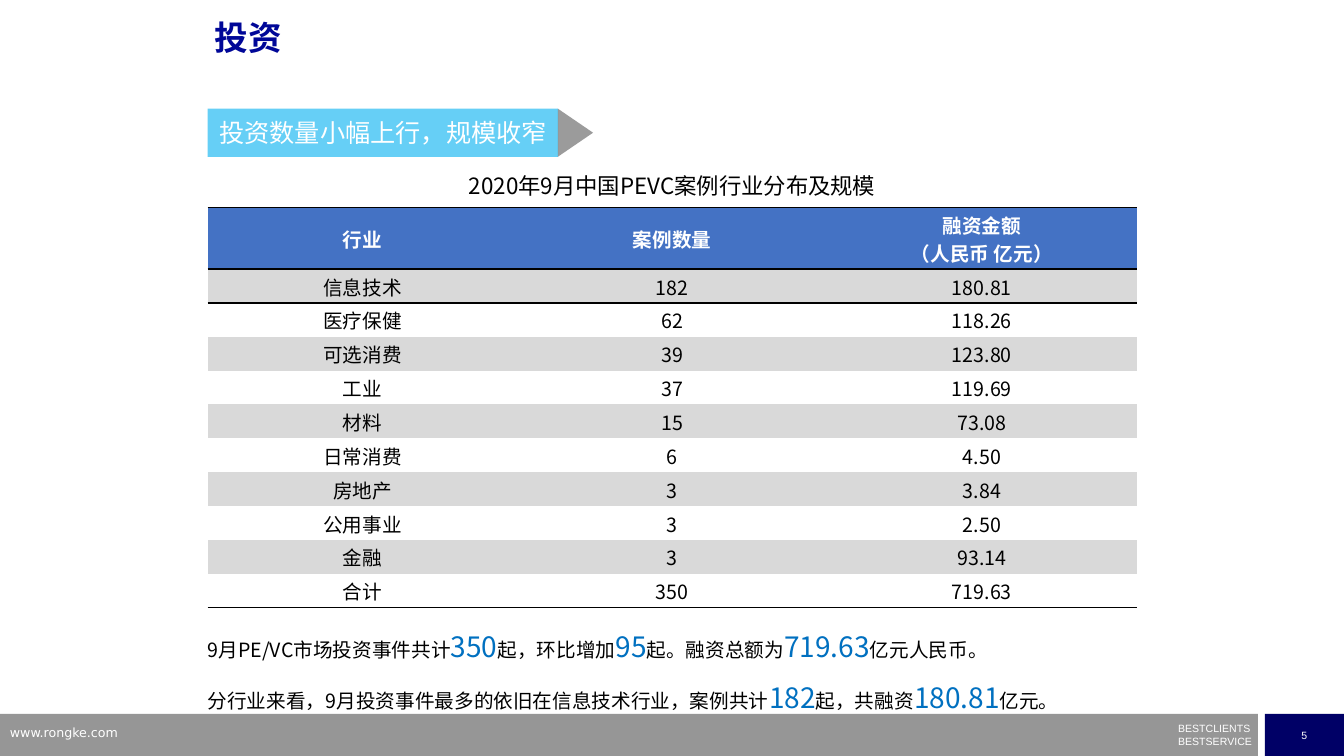
from dataclasses import dataclass
from typing import Any

from lxml.etree import SubElement
from pptx import Presentation
from pptx.dml.color import RGBColor
from pptx.enum.shapes import MSO_SHAPE as Shape
from pptx.enum.text import MSO_ANCHOR as Anchor, PP_ALIGN as Align
from pptx.oxml.ns import qn
from pptx.util import Pt

COLORS = {
    "white": "FFFFFF", "black": "000000", "bar": "969696", "navy": "000066",
    "title": "000798", "banner": "00B0F0", "arrow": "595959",
    "accent": "0070C0", "header": "4472C4", "band": "D9D9D9",
}
CJK = "Noto Sans CJK SC"
NO_STYLE = "{2D5ABB26-0587-4C30-8999-92F81FD0307C}"


@dataclass
class Style:
    size: float
    color: str
    font: str = CJK
    bold: bool = False


@dataclass
class Box:
    left: float
    top: float
    width: float
    height: float

    def emu(self) -> tuple:
        return Pt(self.left), Pt(self.top), Pt(self.width), Pt(self.height)


@dataclass
class Block:
    kind: Any
    box: Box
    color: str
    opacity: int = 100
    rotation: float = 0
    text: str = ""
    style: Style | None = None


@dataclass
class Label:
    box: Box
    paragraphs: list
    styles: list
    para: dict
    inset: bool = False
    gap: float = 0


def rgb(name: str) -> RGBColor:
    return RGBColor.from_string(COLORS[name])


def apply(target: Any, values: dict) -> None:
    for name, value in values.items():
        setattr(target, name, value)


def format_run(r: Any, style: Style) -> None:
    apply(r.font, {"size": Pt(style.size), "name": style.font, "bold": style.bold})
    r.font.color.rgb = rgb(style.color)
    SubElement(r.font._element, qn("a:ea"), typeface=CJK)


def write(p: Any, text: str, style: Style, **values: Any) -> None:
    p.text = text
    apply(p, values)
    for r in p.runs:
        format_run(r, style)


def draw_block(slide: Any, block: Block) -> None:
    s = slide.shapes.add_shape(block.kind, *block.box.emu())
    s.shadow.inherit = False
    s.rotation = block.rotation
    s.fill.solid()
    s.fill.fore_color.rgb = rgb(block.color)
    s.line.fill.background()
    if block.opacity < 100:
        color = s._element.spPr.find(".//" + qn("a:srgbClr"))
        SubElement(color, qn("a:alpha"), val=str(block.opacity * 1000))
    if block.style:
        apply(s.text_frame, {"word_wrap": False, "vertical_anchor": Anchor.MIDDLE})
        write(s.text_frame.paragraphs[0], block.text, block.style, alignment=Align.CENTER)


def draw_label(slide: Any, label: Label) -> None:
    tf = slide.shapes.add_textbox(*label.box.emu()).text_frame
    tf.word_wrap = True
    if not label.inset:
        apply(tf, {f"margin_{side}": 0 for side in ("left", "top", "right", "bottom")})
    for i, pieces in enumerate(label.paragraphs):
        p = tf.add_paragraph() if i else tf.paragraphs[0]
        apply(p, label.para)
        if i and label.gap:
            p.space_before = Pt(label.gap)
        for j, piece in enumerate(pieces):
            r = p.add_run()
            r.text = piece
            format_run(r, label.styles[j % len(label.styles)])


def add_border(cell: Any, side: str) -> None:
    line = SubElement(cell._tc.get_or_add_tcPr(), qn(f"a:ln{side}"), w=str(Pt(1)))
    fill = SubElement(line, qn("a:solidFill"))
    SubElement(fill, qn("a:srgbClr"), val=COLORS["black"])


def fill_cell(cell: Any, text: str, style: Style, fill: str | None, borders: str) -> None:
    for side in borders:
        add_border(cell, side)
    apply(cell, {"margin_left": Pt(0.7), "margin_top": Pt(0.7), "margin_right": Pt(0.7),
                 "margin_bottom": 0, "vertical_anchor": Anchor.MIDDLE})
    if fill:
        cell.fill.solid()
        cell.fill.fore_color.rgb = rgb(fill)
    else:
        cell.fill.background()
    write(cell.text_frame.paragraphs[0], text, style, alignment=Align.CENTER)


CAPTION = "2020年9月中国PEVC案例行业分布及规模"
HEADER = ("行业", "案例数量", "融资金额\v（人民币 亿元）")
INDUSTRIES = [
    ("信息技术", "182", "180.81"), ("医疗保健", "62", "118.26"),
    ("可选消费", "39", "123.80"), ("工业", "37", "119.69"),
    ("材料", "15", "73.08"), ("日常消费", "6", "4.50"),
    ("房地产", "3", "3.84"), ("公用事业", "3", "2.50"),
    ("金融", "3", "93.14"), ("合计", "350", "719.63"),
]


def draw_table(slide: Any, box: Box) -> None:
    rows = [(CAPTION, "", ""), HEADER, *INDUSTRIES]
    table = slide.shapes.add_table(len(rows), 3, *box.emu()).table
    apply(table, {"first_row": False, "horz_banding": False})
    table._tbl.tblPr[0].text = NO_STYLE
    for column in table.columns:
        column.width = Pt(box.width / 3)
    heights = [33, 44] + [24.2] * len(INDUSTRIES)
    looks = [(Style(16, "black"), None), (Style(14, "white", bold=True), "header")]
    looks += [(Style(14, "black"), None if i % 2 else "band") for i in range(len(INDUSTRIES))]
    borders = {0: "B", 1: "TB", 2: "T", len(rows) - 1: "B"}
    for i, (values, height, (style, fill)) in enumerate(zip(rows, heights, looks)):
        table.rows[i].height = Pt(height)
        for j, value in enumerate(values):
            fill_cell(table.cell(i, j), value, style, fill, borders.get(i, ""))
    table.cell(0, 0).merge(table.cell(0, 2))


BLOCKS = [
    Block(Shape.RECTANGLE, Box(0, 510, 898.5, 30), "bar"),
    Block(Shape.RECTANGLE, Box(903.5, 510, 56.5, 30), "navy", text="5",
          style=Style(7.5, "white", "Arial")),
    Block(Shape.RECTANGLE, Box(148.4, 77.6, 250.4, 34.4), "banner", 60,
          text="投资数量小幅上行，规模收窄", style=Style(18, "white")),
    Block(Shape.ISOSCELES_TRIANGLE, Box(393.8, 82.2, 34.4, 25.2), "arrow", 60, 90),
]
LABELS = [
    Label(Box(841.5, 519.8, 55, 14.4), [["BESTCLIENTS"], ["BESTSERVICE"]],
          [Style(7.5, "white", "Arial")], {"line_spacing": 0.5}, gap=4.3),
    Label(Box(0, 514, 230, 18.7), [["www.rongke.com"]],
          [Style(9, "white", "DejaVu Sans")], {}, inset=True),
    Label(Box(148.4, 437.8, 664, 68.4), [
        ["9月PE/VC市场投资事件共计", "350", "起，环比增加", "95",
         "起。融资总额为", "719.63", "亿元人民币。"],
        ["分行业来看，9月投资事件最多的依旧在信息技术行业，案例共计", "182",
         "起，共融资", "180.81", "亿元。"],
    ], [Style(14, "black"), Style(20, "accent")],
        {"line_spacing": 1.5, "alignment": Align.JUSTIFY}),
]


def main() -> None:
    prs = Presentation()
    apply(prs, {"slide_width": Pt(960), "slide_height": Pt(540)})
    slide = prs.slides.add_slide(prs.slide_layouts[5])
    title = slide.shapes.title
    apply(title, dict(zip(("left", "top", "width", "height"), Box(146.2, 11.5, 648, 50.4).emu())))
    title.text_frame.vertical_anchor = Anchor.TOP
    write(title.text_frame.paragraphs[0], "投资", Style(24, "title", "Arial", True),
          alignment=Align.LEFT, line_spacing=0.9)
    for block in BLOCKS:
        draw_block(slide, block)
    for label in LABELS:
        draw_label(slide, label)
    draw_table(slide, Box(148.4, 115.2, 663.6, 319))
    prs.save("out.pptx")


if __name__ == "__main__":
    main()
